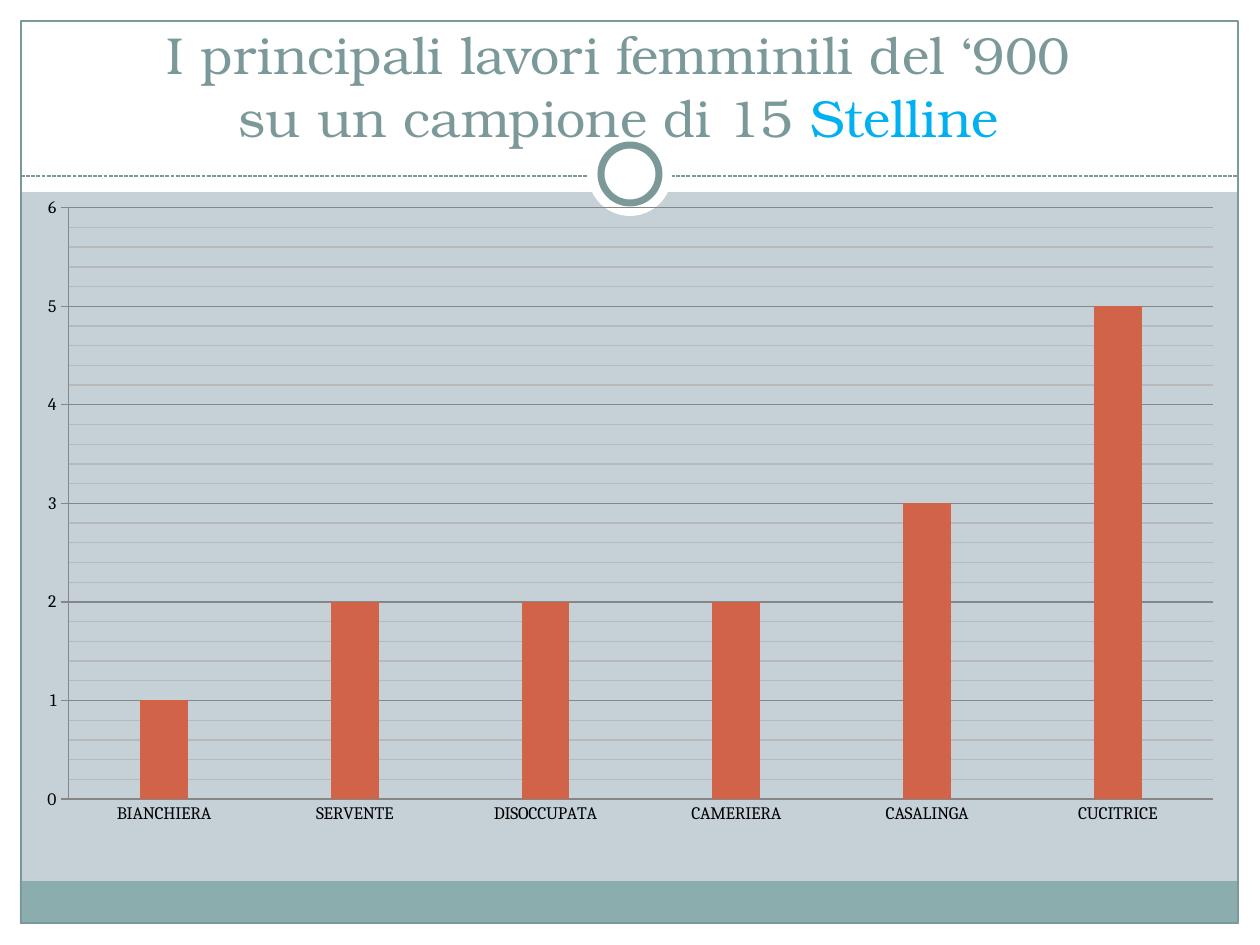
from dataclasses import dataclass
from typing import Optional

import pptx
import pptx.chart.data
import pptx.dml.color
import pptx.enum.chart
import pptx.enum.dml
import pptx.enum.shapes
import pptx.enum.text
import pptx.oxml
import pptx.oxml.ns
import pptx.util

PX_PER_INCH = 126
SLIDE_W, SLIDE_H = 1260, 945
SHAPE = pptx.enum.shapes.MSO_SHAPE


@dataclass(frozen=True)
class Theme:
    background: str = "C5D1D7"
    white: str = "FFFFFF"
    band: str = "8CADAE"
    accent: str = "7C999A"
    highlight: str = "00B0F0"
    bar: str = "D16349"
    ink: str = "000000"
    axis: str = "868686"
    minor_grid: str = "B9B9B9"
    title_font: str = "TeX Gyre Bonum"
    chart_font: str = "Cambria"
    title_size: float = 29.7
    chart_size: float = 10
    thin: float = 0.75
    ring: float = 4


@dataclass(frozen=True)
class Panel:
    kind: SHAPE
    left: int
    top: int
    width: int
    height: int
    fill: Optional[str] = None
    line: Optional[str] = None
    weight: float = 0


THEME = Theme()
PANELS = [
    # White margins around the page
    Panel(SHAPE.RECTANGLE, 0, 924, SLIDE_W, 21, THEME.white),
    Panel(SHAPE.RECTANGLE, 0, 0, SLIDE_W, 192, THEME.white),
    Panel(SHAPE.RECTANGLE, 0, 0, 21, SLIDE_H, THEME.white),
    Panel(SHAPE.RECTANGLE, 1239, 0, 21, SLIDE_H, THEME.white),
    # Footer band and frame
    Panel(SHAPE.RECTANGLE, 20, 881, 1217, 43, THEME.band),
    Panel(SHAPE.RECTANGLE, 21, 21, 1217, 902, None, THEME.accent, THEME.thin),
]
RING = [
    Panel(SHAPE.OVAL, 588, 132, 84, 84, THEME.white),
    Panel(SHAPE.OVAL, 601, 145, 58, 58, THEME.white, THEME.accent, THEME.ring),
]
JOBS = {"BIANCHIERA": 1, "SERVENTE": 2, "DISOCCUPATA": 2,
        "CAMERIERA": 2, "CASALINGA": 3, "CUCITRICE": 5}
PLOT = {"x": 0.033, "y": 0.045, "w": 0.953, "h": 0.892}


def px(length: int) -> int:
    return pptx.util.Emu(round(length * 914400 / PX_PER_INCH))


def rgb(value: str) -> pptx.dml.color.RGBColor:
    return pptx.dml.color.RGBColor.from_string(value)


def style_line(line, color: str, weight: float = THEME.thin) -> None:
    line.color.rgb = rgb(color)
    line.width = pptx.util.Pt(weight)


def style_font(font, *, name: str, size: float, color: str) -> None:
    font.name = name
    font.size = pptx.util.Pt(size)
    font.bold = False
    font.color.rgb = rgb(color)


def draw_panel(page, panel: Panel) -> None:
    shape = page.shapes.add_shape(panel.kind, px(panel.left), px(panel.top),
                                  px(panel.width), px(panel.height))
    shape.shadow.inherit = False
    if panel.fill:
        shape.fill.solid()
        shape.fill.fore_color.rgb = rgb(panel.fill)
    else:
        shape.fill.background()
    if panel.line:
        style_line(shape.line, panel.line, panel.weight)
    else:
        shape.line.fill.background()


def draw_divider(page) -> None:
    divider = page.shapes.add_connector(pptx.enum.shapes.MSO_CONNECTOR.STRAIGHT,
                                        px(21), px(176), px(1239), px(176))
    style_line(divider.line, THEME.accent)
    divider.line.dash_style = pptx.enum.dml.MSO_LINE.SQUARE_DOT
    properties = divider._element.spPr
    properties.append(pptx.oxml.parse_xml(
        f"<a:effectLst {pptx.oxml.ns.nsdecls('a')}/>"))


def add_span(para, text: str, *, name: str, size: float, color: str) -> None:
    for index, part in enumerate(text.split("\n")):
        if index:
            para.add_line_break()
        span = para.add_run()
        span.text = part
        style_font(span.font, name=name, size=size, color=color)


def write_title(page) -> None:
    title = page.shapes.title
    title.left, title.top, title.width, title.height = map(px, (39, 49, 1176, 105))
    box = title.text_frame
    box.word_wrap = True
    box.auto_size = pptx.enum.text.MSO_AUTO_SIZE.NONE
    box.vertical_anchor = pptx.enum.text.MSO_ANCHOR.BOTTOM
    para = box.paragraphs[0]
    para.alignment = pptx.enum.text.PP_ALIGN.CENTER
    for text, color in (
        ("I principali lavori femminili del ‘900 \nsu un campione di 15 ", THEME.accent),
        ("Stelline ", THEME.highlight),
    ):
        add_span(para, text, name=THEME.title_font, size=THEME.title_size, color=color)


def fix_plot_area(chart) -> None:
    area = chart._chartSpace.chart.plotArea
    for old in area.findall(pptx.oxml.ns.qn("c:layout")):
        area.remove(old)
    modes = "".join(f'<c:{key}Mode val="edge"/>' for key in "xy")
    sizes = "".join(f'<c:{key} val="{value}"/>' for key, value in PLOT.items())
    area.insert(0, pptx.oxml.parse_xml(
        f"<c:layout {pptx.oxml.ns.nsdecls('c')}><c:manualLayout>"
        f'<c:layoutTarget val="inner"/>{modes}{sizes}</c:manualLayout></c:layout>'))


def style_minor_gridlines(axis, color: str) -> None:
    gridlines = axis._element.find(pptx.oxml.ns.qn("c:minorGridlines"))
    gridlines.append(pptx.oxml.parse_xml(
        f"<c:spPr {pptx.oxml.ns.nsdecls('c', 'a')}>"
        f'<a:ln w="{pptx.util.Pt(THEME.thin)}"><a:solidFill>'
        f'<a:srgbClr val="{color}"/></a:solidFill></a:ln></c:spPr>'))


def draw_chart(page) -> None:
    data = pptx.chart.data.CategoryChartData()
    data.categories = list(JOBS)
    data.add_series("Series 1", list(JOBS.values()))
    chart = page.shapes.add_chart(pptx.enum.chart.XL_CHART_TYPE.COLUMN_CLUSTERED,
                                  px(29), px(178), px(1201), px(663), data).chart
    chart.has_title = False
    chart.has_legend = False
    style_font(chart.font, name=THEME.chart_font, size=THEME.chart_size, color=THEME.ink)

    # Bars
    plot = chart.plots[0]
    plot.gap_width = 300
    plot.vary_by_categories = False
    fill = plot.series[0].format.fill
    fill.solid()
    fill.fore_color.rgb = rgb(THEME.bar)

    # Axes and gridlines
    tick = pptx.enum.chart.XL_TICK_MARK
    values, categories = chart.value_axis, chart.category_axis
    for axis, mark in ((values, tick.OUTSIDE), (categories, tick.NONE)):
        axis.major_tick_mark = mark
        axis.minor_tick_mark = tick.NONE
        style_line(axis.format.line, THEME.axis)
    values.minimum_scale, values.maximum_scale = 0, 6
    values.major_unit, values.minor_unit = 1, 0.2
    values.has_major_gridlines = values.has_minor_gridlines = True
    style_line(values.major_gridlines.format.line, THEME.axis)
    style_minor_gridlines(values, THEME.minor_grid)
    fix_plot_area(chart)


def main() -> None:
    deck = pptx.Presentation()
    deck.slide_width, deck.slide_height = px(SLIDE_W), px(SLIDE_H)
    page = deck.slides.add_slide(deck.slide_layouts.get_by_name("Title Only"))
    page.background.fill.solid()
    page.background.fill.fore_color.rgb = rgb(THEME.background)

    # Backdrop, from back to front
    for panel in PANELS:
        draw_panel(page, panel)
    draw_divider(page)
    for panel in RING:
        draw_panel(page, panel)

    # Title goes above the backdrop
    write_title(page)
    page.shapes._spTree.append(page.shapes.title._element)
    draw_chart(page)
    deck.save("out.pptx")


if __name__ == "__main__":
    main()
